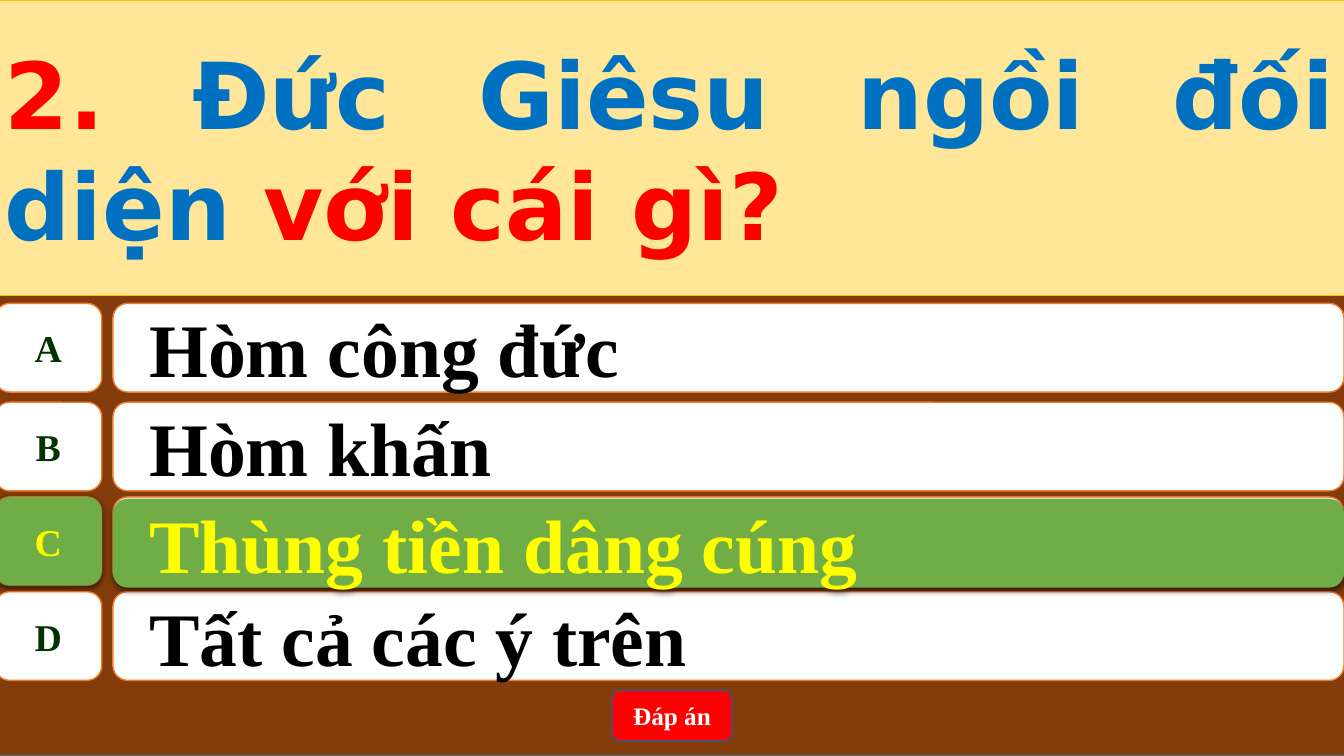
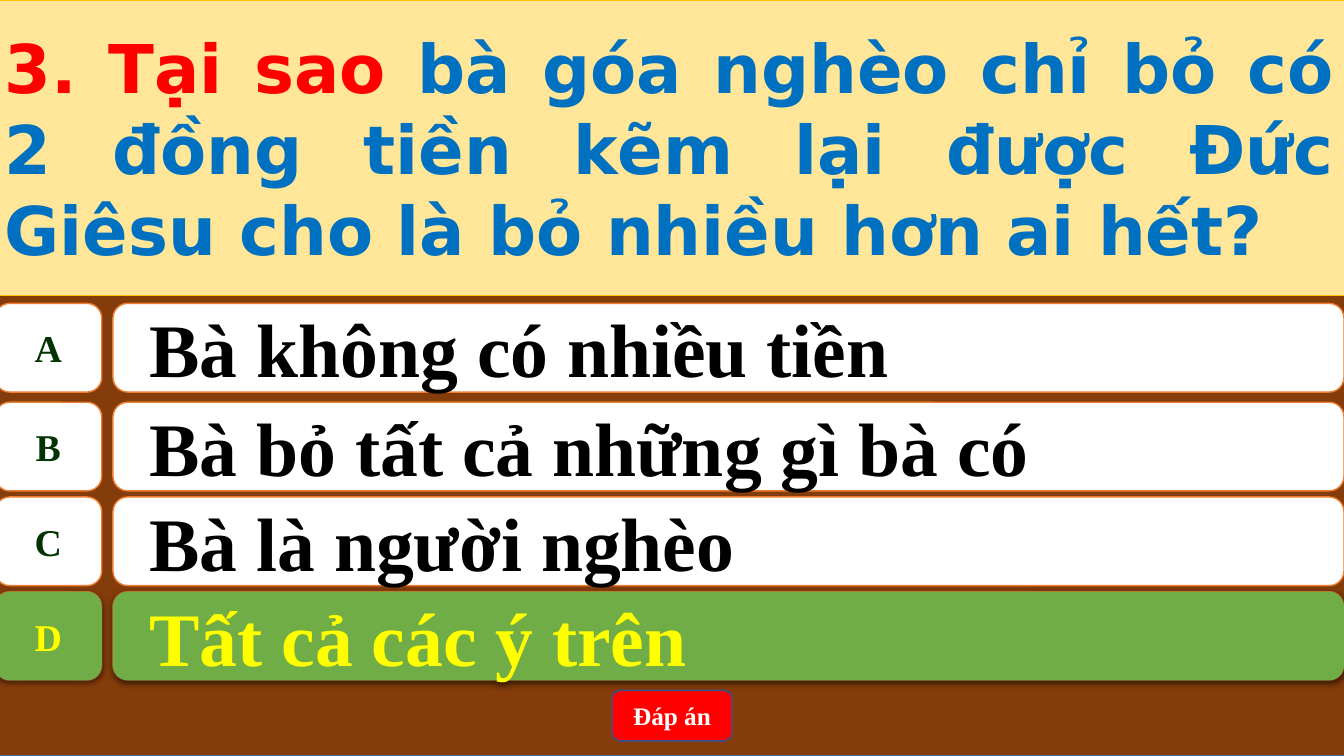
from dataclasses import dataclass

from lxml.etree import SubElement
from pptx import Presentation
from pptx.dml.color import RGBColor
from pptx.enum.shapes import MSO_SHAPE as Shape
from pptx.enum.text import MSO_ANCHOR as Anchor, PP_ALIGN as Align
from pptx.oxml.ns import qn
from pptx.util import Inches, Pt


@dataclass(frozen=True)
class Theme:
    """Colours, fonts and type sizes shared by the quiz slides."""
    board: str = "843C0B"
    board_line: str = "43739E"
    banner: str = "FFE699"
    banner_line: str = "FFC000"
    card: str = "FFFFFF"
    card_line: str = "ED7D31"
    letter: str = "003300"
    answer: str = "000000"
    correct: str = "70AD47"
    correct_text: str = "FFFF00"
    button: str = "FF0000"
    button_line: str = "325491"
    button_text: str = "FFFFFF"
    shadow: str = "000000"
    accent: str = "FF0000"
    question: str = "0070C0"
    question_font: str = "DejaVu Sans"
    answer_font: str = "Times New Roman"
    letter_size: int = 27
    answer_size: int = 54
    button_size: int = 18


class QuizDeck:
    """Builds quiz slides from a theme, keeping track of the current slide."""

    LEFT, WIDTH = -0.05, 13.39
    ROW_TOPS = {"A": 3.01, "B": 3.99, "C": 4.93, "D": 5.87}
    ROW_HEIGHT = 0.88

    def __init__(self, theme):
        """Start an empty widescreen presentation."""
        self.theme = theme
        self.presentation = Presentation()
        self.presentation.slide_width = Inches(13.33)
        self.presentation.slide_height = Inches(7.5)
        self.slide = None

    def add_slide(self):
        """Add a blank slide covered by the brown board."""
        blank = self.presentation.slide_layouts[6]
        self.slide = self.presentation.slides.add_slide(blank)
        self.box(self.slide.shapes, Shape.RECTANGLE, (self.LEFT, 0, self.WIDTH, 7.5),
                 self.theme.board, self.theme.board_line)

    def box(self, shapes, kind, place, fill, line=None, line_width=1):
        """Add a filled shape, outlined only when a line colour is given."""
        shape = shapes.add_shape(kind, *map(Inches, place))
        shape.shadow.inherit = False
        shape.fill.solid()
        shape.fill.fore_color.rgb = RGBColor.from_string(fill)
        if line:
            shape.line.color.rgb = RGBColor.from_string(line)
            shape.line.width = Pt(line_width)
        else:
            shape.line.fill.background()
        return shape

    def label(self, shape, runs, font, size, align, wrap=True):
        """Put bold runs, given as text and colour pairs, into a shape."""
        frame = shape.text_frame
        frame.word_wrap = wrap
        frame.vertical_anchor = Anchor.MIDDLE
        paragraph = frame.paragraphs[0]
        paragraph.alignment = align
        for text, colour in runs:
            run = paragraph.add_run()
            run.text = text
            run.font.name = font
            run.font.size = Pt(size)
            run.font.bold = True
            run.font.color.rgb = RGBColor.from_string(colour)
        return paragraph

    def cast_shadow(self, shape):
        """Give a shape a soft shadow straight below it."""
        effects = shape.element.spPr.find(qn("a:effectLst"))
        shadow = SubElement(effects, qn("a:outerShdw"), blurRad=str(Pt(4.5)),
                            dist=str(Pt(1.5)), dir="5400000", algn="ctr", rotWithShape="0")
        colour = SubElement(shadow, qn("a:srgbClr"), val=self.theme.shadow)
        SubElement(colour, qn("a:alpha"), val="63000")

    def answer_row(self, letter, answer, correct=False, drop=0):
        """Add a letter card and its answer bar, in green when correct."""
        theme, top = self.theme, self.ROW_TOPS[letter]
        fill, line = (theme.correct, None) if correct else (theme.card, theme.card_line)
        letter_colour = theme.correct_text if correct else theme.letter
        answer_colour = theme.correct_text if correct else theme.answer
        shapes = self.slide.shapes.add_group_shape().shapes

        card = self.box(shapes, Shape.FLOWCHART_ALTERNATE_PROCESS,
                        (self.LEFT, top, 1.06, self.ROW_HEIGHT), fill, line)
        self.label(card, [(letter, letter_colour)], theme.answer_font,
                   theme.letter_size, Align.CENTER, wrap=False)

        bar = self.box(shapes, Shape.ROUNDED_RECTANGLE,
                       (1.12, top + drop, 12.21, self.ROW_HEIGHT), fill, line)
        paragraph = self.label(bar, [(answer, answer_colour)], theme.answer_font,
                               theme.answer_size, Align.LEFT)
        properties = paragraph._p.get_or_add_pPr()
        properties.set("marL", str(Inches(0.5)))
        properties.set("indent", str(Inches(-0.28)))

        if correct:
            self.cast_shadow(card)
            self.cast_shadow(bar)

    def answer_button(self):
        """Add the red button under the answers."""
        theme = self.theme
        button = self.box(self.slide.shapes, Shape.ROUNDED_RECTANGLE,
                          (6.07, 6.85, 1.19, 0.5), theme.button, theme.button_line)
        self.label(button, [("Đáp án", theme.button_text)], theme.answer_font,
                   theme.button_size, Align.CENTER)

    def question_banner(self, runs, size):
        """Add the justified question across the top."""
        theme = self.theme
        banner = self.box(self.slide.shapes, Shape.RECTANGLE, (self.LEFT, 0, self.WIDTH, 2.93),
                          theme.banner, theme.banner_line, 0.5)
        self.label(banner, runs, theme.question_font, size, Align.JUSTIFY)

    def question_slide(self, question, size, answers, correct, drop=0):
        """Build one whole question with its correct answer revealed."""
        self.add_slide()
        choices = dict(zip(self.ROW_TOPS, answers))
        for letter, answer in choices.items():
            self.answer_row(letter, answer)
        self.answer_button()
        self.answer_row(correct, choices[correct], correct=True, drop=drop)
        self.question_banner(question, size)


def main():
    """Build and save the quiz."""
    theme = Theme()
    deck = QuizDeck(theme)
    deck.question_slide(
        [("2. ", theme.accent),
         ("Đức Giêsu ngồi đối diện ", theme.question),
         ("với cái gì?", theme.accent)],
        66,
        ["Hòm công đức", "Hòm khấn", "Thùng tiền dâng cúng", "Tất cả các ý trên"],
        "C", drop=0.02)
    deck.question_slide(
        [("3. Tại sao ", theme.accent),
         ("bà góa nghèo chỉ bỏ có 2 đồng tiền kẽm lại được Đức Giêsu "
          "cho là bỏ nhiều hơn ai hết?", theme.question)],
        48,
        ["Bà không có nhiều tiền", "Bà bỏ tất cả những gì bà có",
         "Bà là người nghèo", "Tất cả các ý trên"],
        "D")
    deck.presentation.save("out.pptx")


if __name__ == "__main__":
    main()
